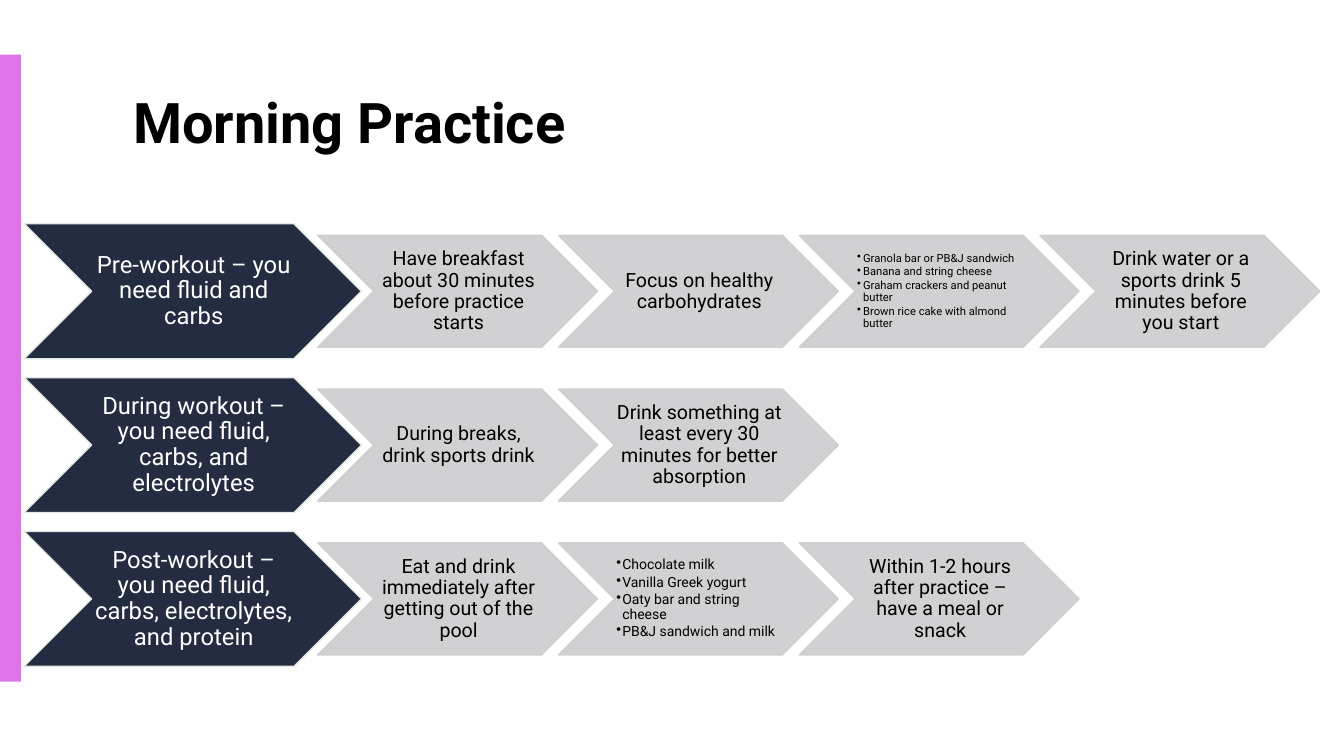
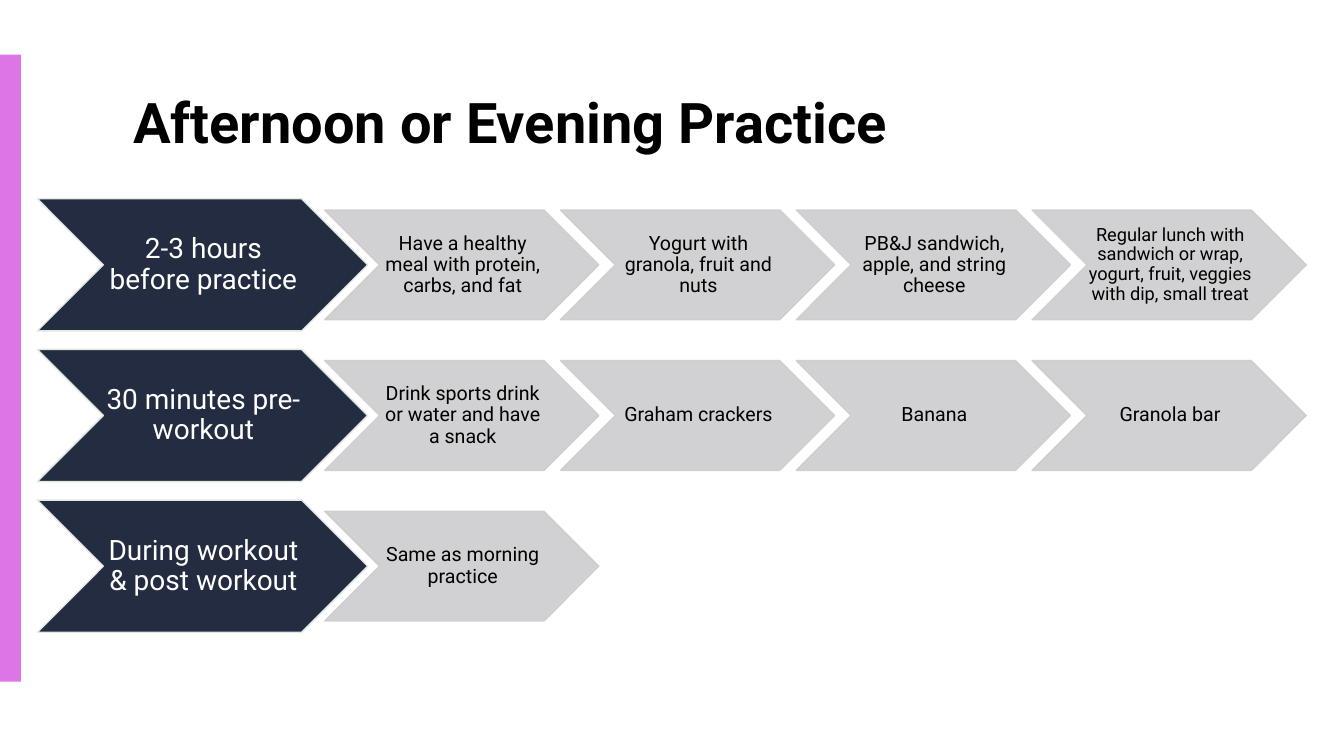
from lxml import etree
from pptx import Presentation
from pptx.dml.color import RGBColor
from pptx.enum.shapes import MSO_SHAPE
from pptx.enum.text import MSO_ANCHOR, PP_ALIGN
from pptx.oxml.ns import qn
from pptx.util import Cm, Pt

CHEVRON, RECTANGLE = MSO_SHAPE.CHEVRON, MSO_SHAPE.RECTANGLE
LEFT, CENTER, MIDDLE = PP_ALIGN.LEFT, PP_ALIGN.CENTER, MSO_ANCHOR.MIDDLE
TITLE_ONLY = 5
FONT = "Roboto"
COLORS = {
    "accent": "DE75E7",
    "header": "242C41",
    "header line": "E2E8E2",
    "step": "CDCDCF",
    "black": "000000",
    "white": "FFFFFF",
}

# Proportions of the chevron rows
ASPECT = 2.5         # chevron width / height
STEP_SCALE = 0.83    # step height / header height
ROW_PITCH = 1.14     # of the header height
FIRST_STEP = 0.87    # of the header width
STEP_PITCH = 0.86    # of the step width

# Each step is (text, size); a list of texts becomes bullets.
SLIDES = [
    {
        "title": "Morning Practice",
        "left": 0.61, "top": 5.64, "height": 3.4, "header size": 17,
        "rows": [
            ("Pre-workout – you need fluid and carbs", [
                ("Have breakfast about 30 minutes before practice starts", 14),
                ("Focus on healthy carbohydrates", 14),
                (["Granola bar or PB&J sandwich",
                  "Banana and string cheese",
                  "Graham crackers and peanut butter",
                  "Brown rice cake with almond butter"], 8),
                ("Drink water or a sports drink 5 minutes before you start", 14),
            ]),
            ("During workout – you need fluid, carbs, and electrolytes", [
                ("During breaks, drink sports drink", 14),
                ("Drink something at least every 30 minutes for better absorption", 14),
            ]),
            ("Post-workout – you need fluid, carbs, electrolytes, and protein", [
                ("Eat and drink immediately after getting out of the pool", 14),
                (["Chocolate milk",
                  "Vanilla Greek yogurt",
                  "Oaty bar and string cheese",
                  "PB&J sandwich and milk"], 10),
                ("Within 1-2 hours after practice – have a meal or snack", 14),
            ]),
        ],
    },
    {
        "title": "Afternoon or Evening Practice",
        "left": 0.94, "top": 5.01, "height": 3.33, "header size": 20,
        "rows": [
            ("2-3 hours before practice", [
                ("Have a healthy meal with protein, carbs, and fat", 14),
                ("Yogurt with granola, fruit and nuts", 14),
                ("PB&J sandwich, apple, and string cheese", 14),
                ("Regular lunch with sandwich or wrap, yogurt, fruit, veggies "
                 "with dip, small treat", 13),
            ]),
            ("30 minutes pre-workout", [
                ("Drink sports drink or water and have a snack", 14),
                ("Graham crackers", 14),
                ("Banana", 14),
                ("Granola bar", 14),
            ]),
            ("During workout & post workout", [
                ("Same as morning practice", 14),
            ]),
        ],
    },
]


def write_text(frame, text, size, color="black", bold=False, align=CENTER):
    """Fill a text frame; a list of texts is set as left-aligned bullets."""
    bulleted = isinstance(text, list)
    frame.word_wrap = True
    frame.vertical_anchor = MIDDLE
    for index, line in enumerate(text if bulleted else [text]):
        paragraph = frame.add_paragraph() if index else frame.paragraphs[0]
        if bulleted:
            properties = paragraph._p.get_or_add_pPr()
            properties.set("marL", str(Cm(0.15)))
            properties.set("indent", str(-Cm(0.15)))
            bullet_color = etree.SubElement(properties, qn("a:buClr"))
            etree.SubElement(bullet_color, qn("a:srgbClr"), val=COLORS[color])
            etree.SubElement(properties, qn("a:buChar"), char="•")
            paragraph.space_after = Pt(size * 0.15)
        paragraph.alignment = LEFT if bulleted else align
        paragraph.line_spacing = 0.9
        run = paragraph.add_run()
        run.text = line
        run.font.name = FONT
        run.font.size = Pt(size)
        run.font.bold = bold
        run.font.color.rgb = RGBColor.from_string(COLORS[color])


def add_block(slide, preset, left, top, width, height, fill, line=None, opacity=100):
    """Add a flat shape, with lengths in centimetres and opacity in percent."""
    shape = slide.shapes.add_shape(preset, Cm(left), Cm(top), Cm(width), Cm(height))
    shape.shadow.inherit = False
    shape.fill.solid()
    shape.fill.fore_color.rgb = RGBColor.from_string(COLORS[fill])
    if line:
        shape.line.color.rgb = RGBColor.from_string(COLORS[line])
        shape.line.width = Pt(1)
    else:
        shape.line.fill.background()
    if opacity < 100:
        for color in shape._element.spPr.iter(qn("a:srgbClr")):
            etree.SubElement(color, qn("a:alpha"), val=str(opacity * 1000))
    frame = shape.text_frame
    frame.margin_left = Cm(0.05)
    frame.margin_right = 0
    frame.margin_top = frame.margin_bottom = Cm(0.03)
    return shape


presentation = Presentation()
presentation.slide_width = Cm(33.87)
presentation.slide_height = Cm(19.05)

for content in SLIDES:
    slide = presentation.slides.add_slide(presentation.slide_layouts[TITLE_ONLY])
    add_block(slide, RECTANGLE, 0, 1.38, 0.53, 15.8, "accent")

    title = slide.shapes.title
    title.left, title.top = Cm(3.1), Cm(1.52)
    title.width, title.height = Cm(28.24), Cm(3.28)
    write_text(title.text_frame, content["title"], 40, bold=True, align=LEFT)

    header_left, header_height = content["left"], content["height"]
    header_width = header_height * ASPECT
    step_height = header_height * STEP_SCALE
    step_width = step_height * ASPECT

    for row, (header_text, steps) in enumerate(content["rows"]):
        header_top = content["top"] + row * header_height * ROW_PITCH
        header = add_block(slide, CHEVRON, header_left, header_top, header_width,
                           header_height, "header", line="header line")
        write_text(header.text_frame, header_text, content["header size"], color="white")

        step_top = header_top + (header_height - step_height) / 2
        for column, (step_text, size) in enumerate(steps):
            step_left = (header_left + header_width * FIRST_STEP
                         + column * step_width * STEP_PITCH)
            step = add_block(slide, CHEVRON, step_left, step_top, step_width,
                             step_height, "step", line="step", opacity=90)
            write_text(step.text_frame, step_text, size)

presentation.save("out.pptx")
